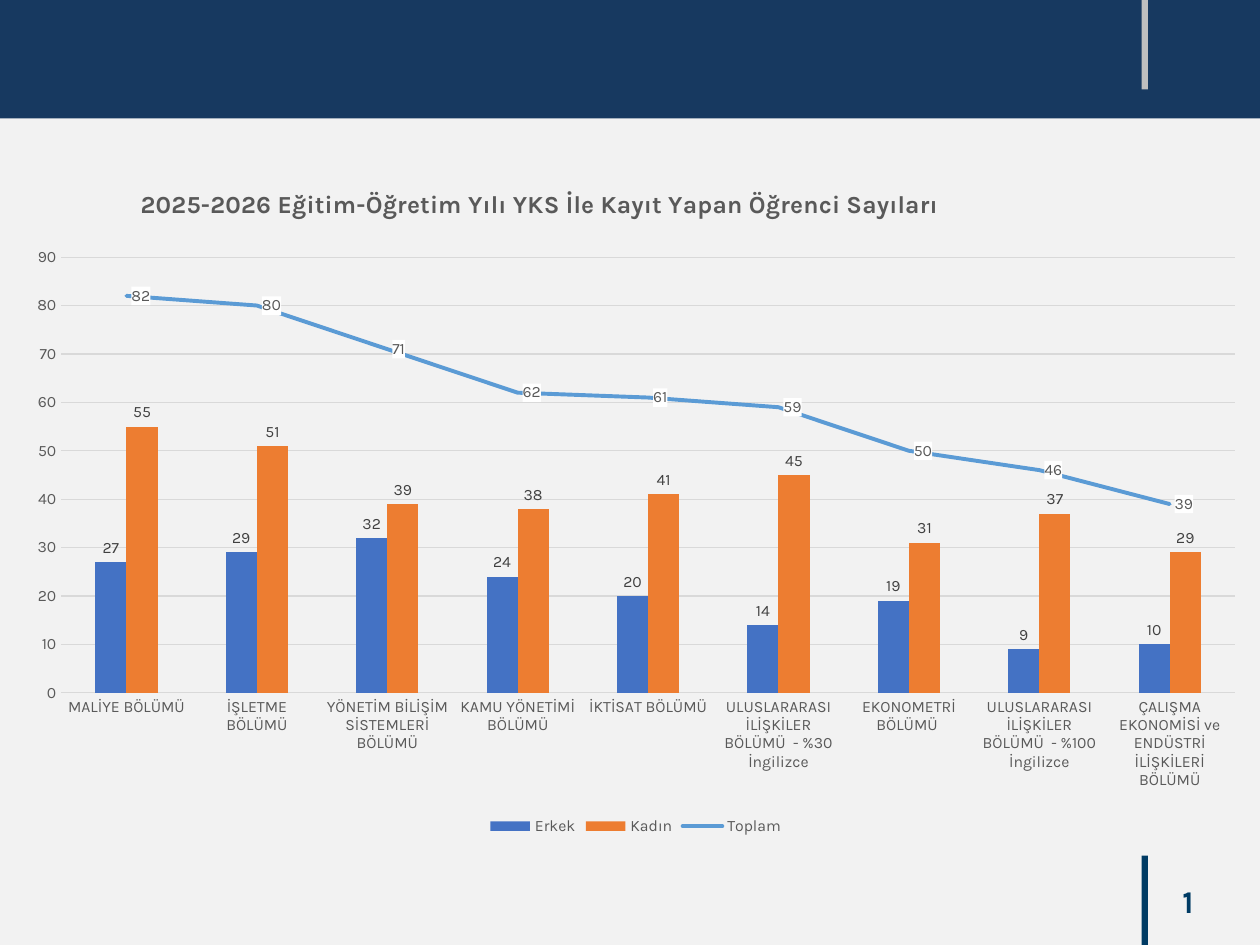
from lxml import etree
from pptx import Presentation
from pptx.chart.data import CategoryChartData
from pptx.dml.color import RGBColor
from pptx.enum import chart as charts, shapes, text
from pptx.oxml import parse_xml
from pptx.oxml.ns import nsdecls, qn
from pptx.util import Inches, Pt

FONT = "Karla"
GREY = "595959"
DEPARTMENTS = [
    ("MALİYE BÖLÜMÜ", 27, 55),
    ("İŞLETME BÖLÜMÜ", 29, 51),
    ("YÖNETİM BİLİŞİM SİSTEMLERİ BÖLÜMÜ", 32, 39),
    ("KAMU YÖNETİMİ BÖLÜMÜ", 24, 38),
    ("İKTİSAT BÖLÜMÜ", 20, 41),
    ("ULUSLARARASI İLİŞKİLER BÖLÜMÜ  - %30 İngilizce", 14, 45),
    ("EKONOMETRİ BÖLÜMÜ ", 19, 31),
    ("ULUSLARARASI İLİŞKİLER BÖLÜMÜ  - %100 İngilizce", 9, 37),
    ("ÇALIŞMA EKONOMİSİ ve ENDÜSTRİ İLİŞKİLERİ BÖLÜMÜ", 10, 29),
]


def color(value):
    return RGBColor.from_string(value)


def style_font(font, size, value, bold=False):
    font.name = FONT
    font.size = Pt(size)
    font.bold = bold
    font.color.rgb = color(value)


def add_bar(page, left, top, width, height, fill):
    bar = page.shapes.add_shape(
        shapes.MSO_SHAPE.RECTANGLE, Inches(left), Inches(top), Inches(width), Inches(height))
    bar.shadow.inherit = False
    bar.fill.solid()
    bar.fill.fore_color.rgb = color(fill)
    bar.line.fill.background()


def add_page_number(page):
    box = page.shapes.add_textbox(Inches(7.32), Inches(6.95), Inches(2.25), Inches(0.4))
    frame = box.text_frame
    frame.word_wrap = True
    frame.vertical_anchor = text.MSO_ANCHOR.MIDDLE
    frame.text = "1"
    para = frame.paragraphs[0]
    para.alignment = text.PP_ALIGN.RIGHT
    span = para.runs[0]
    style_font(span.font, 18, "003B64", True)
    field = span._r
    field.tag = qn("a:fld")
    field.set("id", "{B6F15528-21DE-4FAA-801E-634DDDAF4B2B}")
    field.set("type", "slidenum")


def move_to_line_plot(chart, series):
    columns = chart.plots[0]._element
    line = parse_xml(
        f'<c:lineChart {nsdecls("c")}><c:grouping val="standard"/>'
        '<c:varyColors val="0"/><c:marker val="1"/></c:lineChart>')
    element = series._element
    for invert in element.findall(qn("c:invertIfNegative")):
        element.remove(invert)
    line.find(qn("c:varyColors")).addnext(element)
    for axis in columns.findall(qn("c:axId")):
        etree.SubElement(line, qn("c:axId")).set("val", axis.get("val"))
    columns.addnext(line)


def set_layout(parent, before, inner=False, **sizes):
    for old in parent.findall(qn("c:layout")):
        parent.remove(old)
    target = '<c:layoutTarget val="inner"/>' if inner else ""
    modes = '<c:xMode val="edge"/><c:yMode val="edge"/>'
    values = "".join(f'<c:{name} val="{value}"/>' for name, value in sizes.items())
    layout = parse_xml(
        f'<c:layout {nsdecls("c")}><c:manualLayout>{target}{modes}{values}'
        '</c:manualLayout></c:layout>')
    parent.find(qn(before)).addprevious(layout)


def label_series(series, position, value, fill=None):
    labels = series.data_labels
    labels.show_value = True
    labels.position = position
    style_font(labels.font, 9, value)
    if fill:
        box = parse_xml(
            f'<c:spPr {nsdecls("c", "a")}><a:solidFill><a:srgbClr val="{fill}"/>'
            '</a:solidFill></c:spPr>')
        labels._element.find(qn("c:txPr")).addprevious(box)


def style_title(chart):
    frame = chart.chart_title.text_frame
    frame.text = "2025-2026 Eğitim-Öğretim Yılı YKS İle Kayıt Yapan Öğrenci Sayıları"
    style_font(frame.paragraphs[0].runs[0].font, 14, GREY, True)
    chart.chart_title.include_in_layout = False
    set_layout(chart.chart_title._element, "c:overlay", x=0.1, y=0.02)


def style_axes(chart):
    for axis in (chart.category_axis, chart.value_axis):
        axis.major_tick_mark = axis.minor_tick_mark = charts.XL_TICK_MARK.NONE
        style_font(axis.tick_labels.font, 9, GREY)
    values = chart.value_axis
    values.minimum_scale, values.maximum_scale, values.major_unit = 0, 90, 10
    values.format.line.fill.background()
    for line in (chart.category_axis.format.line, values.major_gridlines.format.line):
        line.color.rgb = color("D9D9D9")
        line.width = Pt(0.75)


def add_student_chart(page):
    names, men, women = zip(*DEPARTMENTS)
    data = CategoryChartData()
    data.categories = names
    data.add_series("Erkek", men)
    data.add_series("Kadın", women)
    data.add_series("Toplam", [sum(pair) for pair in zip(men, women)])
    chart = page.shapes.add_chart(
        charts.XL_CHART_TYPE.COLUMN_CLUSTERED,
        Inches(0.09), Inches(1.35), Inches(9.91), Inches(5.32), data).chart
    style_font(chart.font, 10, "000000")
    move_to_line_plot(chart, chart.plots[0].series[2])
    columns, line = chart.plots
    columns.gap_width = 219
    columns.overlap = 0
    columns.vary_by_categories = False
    for series, fill in zip(columns.series, ("4472C4", "ED7D31")):
        series.format.fill.solid()
        series.format.fill.fore_color.rgb = color(fill)
        label_series(series, charts.XL_LABEL_POSITION.OUTSIDE_END, "404040")
    total = line.series[0]
    total.smooth = False
    total.marker.style = charts.XL_MARKER_STYLE.NONE
    total.format.line.color.rgb = color("5B9BD5")
    total.format.line.width = Pt(2.25)
    total.format.line._ln.set("cap", "rnd")
    label_series(total, charts.XL_LABEL_POSITION.RIGHT, GREY, "FFFFFF")
    style_title(chart)
    style_axes(chart)
    set_layout(columns._element.getparent(), "c:barChart", True, x=0.04, y=0.13, w=0.94, h=0.65)
    chart.has_legend = True
    chart.legend.position = charts.XL_LEGEND_POSITION.BOTTOM
    chart.legend.include_in_layout = False
    style_font(chart.legend.font, 9, GREY)


def main():
    deck = Presentation()
    deck.slide_width, deck.slide_height = Inches(10), Inches(7.5)
    page = deck.slides.add_slide(deck.slide_layouts[6])
    page.background.fill.solid()
    page.background.fill.fore_color.rgb = color("F2F2F2")
    add_bar(page, 0, 0, 10, 0.94, "173960")
    add_bar(page, 9.06, 6.79, 0.05, 0.71, "003B64")
    add_bar(page, 9.06, 0, 0.05, 0.71, "BFBFBF")
    add_page_number(page)
    add_student_chart(page)
    deck.save("out.pptx")


if __name__ == "__main__":
    main()
